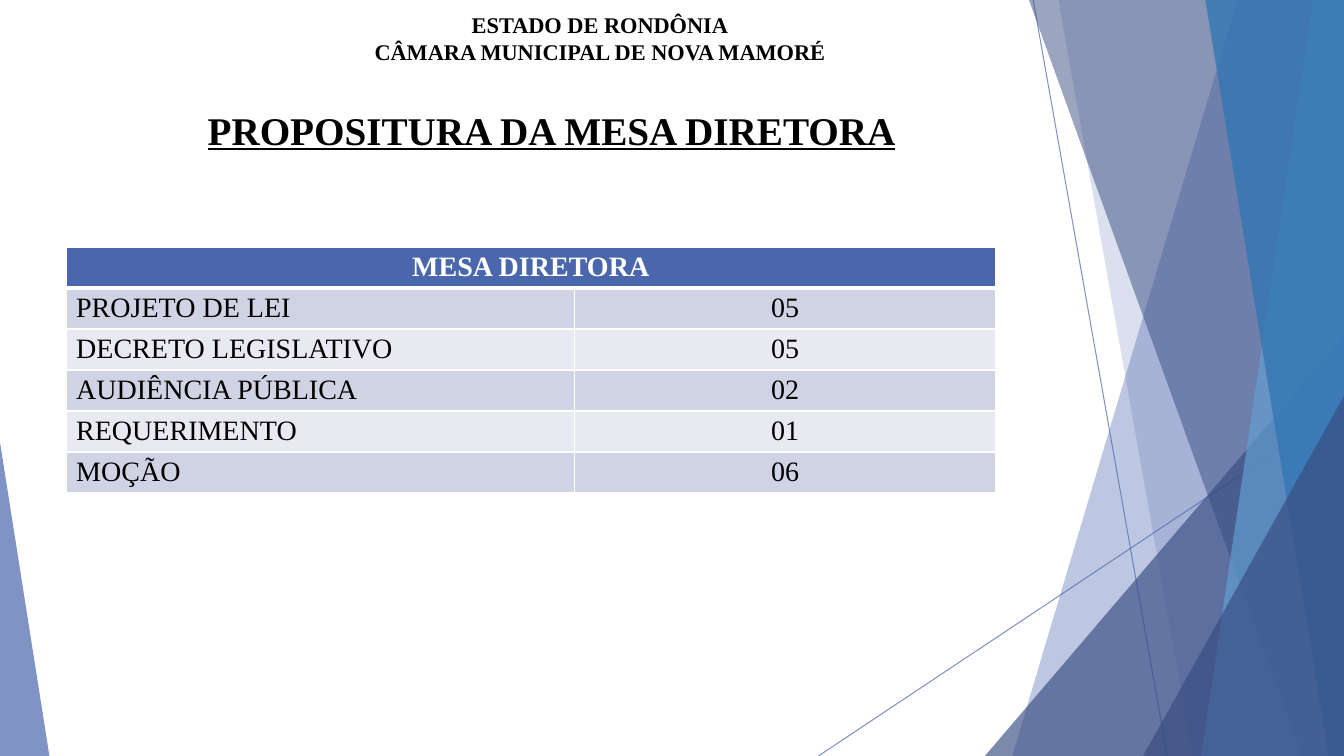
from lxml import etree
from pptx import Presentation
from pptx.dml.color import RGBColor
from pptx.enum.shapes import MSO_CONNECTOR, MSO_SHAPE
from pptx.enum.text import MSO_ANCHOR, MSO_AUTO_SIZE, PP_ALIGN
from pptx.oxml.ns import qn
from pptx.util import Pt

LEFT, CENTER = PP_ALIGN.LEFT, PP_ALIGN.CENTER
TOP, MIDDLE = MSO_ANCHOR.TOP, MSO_ANCHOR.MIDDLE
NO_AUTOFIT = MSO_AUTO_SIZE.NONE
STRAIGHT = MSO_CONNECTOR.STRAIGHT
TRIANGLE = MSO_SHAPE.ISOSCELES_TRIANGLE

FONT = "Times New Roman"
SLIDE_W, SLIDE_H = 960, 540
TITLE_ONLY = 5
COLORS = {
    "accent": "4A66AC",
    "navy": "384C81",
    "sky": "629DD1",
    "blue": "3477B2",
    "band_dark": "D0D3E3",
    "band_light": "E9EAF1",
    "white": "FFFFFF",
    "black": "000000",
}
ROWS = [
    ("PROJETO DE LEI", "05"),
    ("DECRETO LEGISLATIVO", "05"),
    ("AUDIÊNCIA PÚBLICA", "02"),
    ("REQUERIMENTO", "01"),
    ("MOÇÃO", "06"),
]


def rgb(name):
    return RGBColor.from_string(COLORS[name])


def set_alpha(sp, percent):
    """Make the shape's solid colour partly transparent."""
    color = next(sp._element.spPr.iter(qn("a:srgbClr")))
    etree.SubElement(color, qn("a:alpha"), val=str(percent * 1000))


def paint(sp, color, alpha):
    sp.shadow.inherit = False
    sp.fill.solid()
    sp.fill.fore_color.rgb = rgb(color)
    sp.line.fill.background()
    set_alpha(sp, alpha)


def add_ray(slide, x1, y1, x2, y2):
    line = slide.shapes.add_connector(STRAIGHT, Pt(x1), Pt(y1), Pt(x2), Pt(y2))
    line.line.color.rgb = rgb("accent")
    line.line.width = Pt(0.75)
    set_alpha(line, 70)
    etree.SubElement(line._element.spPr, qn("a:effectLst"))


def add_facet(slide, top_x, bottom_x, color, alpha):
    """Full-height panel from a slanted left side to the slide's right edge."""
    builder = slide.shapes.build_freeform(top_x, 0, scale=Pt(1))
    builder.add_line_segments(
        [(SLIDE_W, 0), (SLIDE_W, SLIDE_H), (bottom_x, SLIDE_H)], close=True)
    paint(builder.convert_to_shape(), color, alpha)


def add_corner(slide, left, top, width, apex, color, alpha):
    """Right triangle standing on the slide's bottom edge; apex 0 left, 1 right."""
    sp = slide.shapes.add_shape(
        TRIANGLE, Pt(left), Pt(top), Pt(width), Pt(SLIDE_H - top))
    sp.adjustments[0] = apex
    paint(sp, color, alpha)


def add_decoration(slide):
    add_ray(slide, 738, 0, 833.8, SLIDE_H)
    add_ray(slide, SLIDE_W, 290.2, 584.6, SLIDE_H)
    add_facet(slide, 884.2, 722.9, "accent", 36)
    add_facet(slide, 756, 851.8, "accent", 20)
    add_corner(slide, 703.5, 239.8, 256.5, 1, "navy", 66)
    add_facet(slide, 735.1, 929.5, "navy", 50)
    add_facet(slide, 938.2, 858.2, "sky", 70)
    add_facet(slide, 861.1, 949, "blue", 80)
    add_corner(slide, 816.5, 283, 143.5, 1, "navy", 66)
    add_corner(slide, 0, 316, 35.3, 0, "accent", 70)


def write(tf, text, size, align, color="black", bold=True, underline=False):
    p = tf.paragraphs[0]
    p.text = text
    p.alignment = align
    p.font.name = FONT
    p.font.size = Pt(size)
    p.font.bold = bold
    p.font.underline = underline
    p.font.color.rgb = rgb(color)


def add_heading(slide):
    box = slide.shapes.add_textbox(Pt(188.6), Pt(4.3), Pt(480), Pt(46))
    box.text_frame.word_wrap = True
    write(box.text_frame, "ESTADO DE RONDÔNIA\nCÂMARA MUNICIPAL DE NOVA MAMORÉ",
          16, CENTER)


def set_title(slide):
    title = slide.shapes.title
    title.left, title.top, title.width, title.height = (
        Pt(141.1), Pt(72), Pt(544.3), Pt(41))
    tf = title.text_frame
    tf.word_wrap = True
    tf.auto_size = NO_AUTOFIT
    tf.vertical_anchor = TOP
    write(tf, "PROPOSITURA DA MESA DIRETORA", 28, LEFT, underline=True)


def add_borders(cell, bottom):
    tc_pr = cell._tc.get_or_add_tcPr()
    for side, width in (("L", 1), ("R", 1), ("T", 1), ("B", bottom)):
        ln = etree.SubElement(tc_pr, qn(f"a:ln{side}"), w=str(Pt(width)))
        fill = etree.SubElement(ln, qn("a:solidFill"))
        etree.SubElement(fill, qn("a:srgbClr"), val=COLORS["white"])


def format_cell(cell, fill, bottom=1):
    add_borders(cell, bottom)
    cell.fill.solid()
    cell.fill.fore_color.rgb = rgb(fill)
    cell.vertical_anchor = MIDDLE
    cell.margin_top = cell.margin_bottom = Pt(3)


def add_totals_table(slide):
    row_h, widths = 29.3, (363.2, 300.8)
    count = len(ROWS) + 1
    table = slide.shapes.add_table(
        count, 2, Pt(47.2), Pt(176.4), Pt(sum(widths)), Pt(row_h * count)).table
    for column, width in zip(table.columns, widths):
        column.width = Pt(width)
    for row in table.rows:
        row.height = Pt(row_h)

    header = table.cell(0, 0)
    header.merge(table.cell(0, 1))
    for cell in table.rows[0].cells:
        format_cell(cell, "accent", bottom=3)
    write(header.text_frame, "MESA DIRETORA", 20, CENTER, "white")

    for i, values in enumerate(ROWS, start=1):
        band = "band_dark" if i % 2 else "band_light"
        for cell, text, align in zip(table.rows[i].cells, values, (LEFT, CENTER)):
            format_cell(cell, band)
            write(cell.text_frame, text, 20, align, bold=False)


def main():
    prs = Presentation()
    prs.slide_width, prs.slide_height = Pt(SLIDE_W), Pt(SLIDE_H)
    slide = prs.slides.add_slide(prs.slide_layouts[TITLE_ONLY])
    add_decoration(slide)
    add_totals_table(slide)
    add_heading(slide)
    set_title(slide)
    prs.save("out.pptx")


if __name__ == "__main__":
    main()
